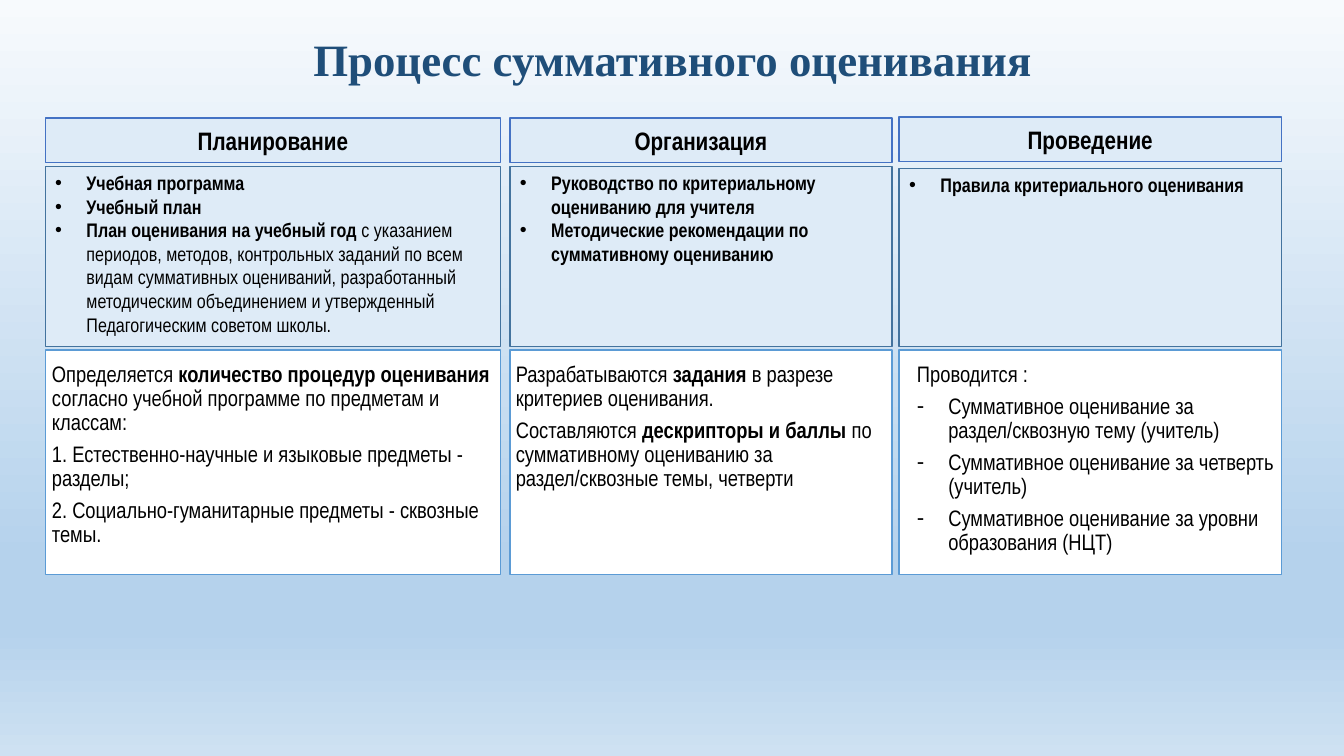
from copy import deepcopy
from dataclasses import dataclass

from lxml.etree import SubElement
from pptx import Presentation
from pptx.dml.color import RGBColor
from pptx.enum.shapes import MSO_SHAPE
from pptx.enum.text import MSO_ANCHOR as Anchor, PP_ALIGN as Align
from pptx.oxml.ns import qn
from pptx.util import Cm, Pt


@dataclass(frozen=True)
class Theme:
    title_font: str = "Times New Roman"
    body_font: str = "Arial Narrow"
    title_size: int = 32
    heading_size: int = 18
    document_size: int = 14
    detail_size: int = 16
    title_color: str = "1F4E79"
    text_color: str = "000000"
    panel_fill: str = "DEEBF7"
    detail_fill: str = "FFFFFF"
    heading_line: str = "4472C4"
    document_line: str = "43739E"
    detail_line: str = "5B9BD5"
    background: tuple = ((0, "F7FAFD"), (0.74, "B5D2EC"), (0.83, "B5D2EC"), (1, "CEE1F2"))


theme = Theme()


def add_panel(left, top, width, height, fill, line):
    panel = slide.shapes.add_shape(MSO_SHAPE.RECTANGLE, Cm(left), Cm(top), Cm(width), Cm(height))
    panel.shadow.inherit = False
    panel.fill.solid()
    panel.fill.fore_color.rgb = RGBColor.from_string(fill)
    panel.line.color.rgb = RGBColor.from_string(line)
    panel.line.width = Pt(1)
    return panel


def write(shape, lines, size, font=theme.body_font, color=theme.text_color,
          align=Align.LEFT, anchor=Anchor.TOP, spacing=1, after=0):
    """Write one paragraph per line; ** toggles bold, a leading "• " or "- " is a bullet."""
    frame = shape.text_frame
    frame.word_wrap = True
    frame.vertical_anchor = anchor
    for index, line in enumerate(lines):
        paragraph = frame.paragraphs[0] if index == 0 else frame.add_paragraph()
        paragraph.alignment = align
        paragraph.line_spacing = spacing
        paragraph.space_after = Pt(after)
        if line[:2] in ("• ", "- "):
            properties = paragraph._p.get_or_add_pPr()
            properties.set("marL", str(Cm(0.79)))
            properties.set("indent", str(-Cm(0.79)))
            SubElement(properties, qn("a:buFont"), typeface="Arial")
            SubElement(properties, qn("a:buChar"), char=line[0])
            line = line[2:]
        for part, text in enumerate(line.split("**")):
            if text:
                run = paragraph.add_run()
                run.text = text
                run.font.name = font
                run.font.size = Pt(size)
                run.font.bold = part % 2 == 1
                run.font.color.rgb = RGBColor.from_string(color)


presentation = Presentation()
presentation.slide_width = Cm(33.87)
presentation.slide_height = Cm(19.05)
slide = presentation.slides.add_slide(presentation.slide_layouts[6])

background = slide.background.fill
background.gradient()
background.gradient_angle = 270
stop_list = next(slide.element.iter(qn("a:gsLst")))
while len(stop_list) < len(theme.background):
    stop_list.append(deepcopy(stop_list[0]))
for stop, (position, color) in zip(background.gradient_stops, theme.background):
    stop.position = position
    stop.color.rgb = RGBColor.from_string(color)

title = slide.shapes.add_textbox(Cm(1.57), Cm(0.69), Cm(30.76), Cm(1.73))
write(title, ["**Процесс суммативного оценивания**"], theme.title_size, theme.title_font,
      theme.title_color, Align.CENTER, Anchor.MIDDLE, spacing=0.9)

stages = [
    dict(
        heading="Планирование", left=1.14, width=11.48, heading_top=2.97, document_top=4.19,
        detail_shift=0.02,
        documents=[
            "• **Учебная программа**",
            "• **Учебный план**",
            "• **План оценивания на учебный год **с указанием периодов, методов, контрольных "
            "заданий по всем видам суммативных оцениваний, разработанный методическим "
            "объединением и утвержденный Педагогическим советом школы.",
        ],
        details=[
            "Определяется** количество процедур оценивания **согласно учебной программе "
            "по предметам и классам:",
            "1. Естественно-научные и языковые предметы - разделы;",
            "2. Социально-гуманитарные предметы - сквозные темы.",
        ],
    ),
    dict(
        heading="Организация", left=12.85, width=9.63, heading_top=2.97, document_top=4.19,
        detail_shift=0,
        documents=[
            "• **Руководство по критериальному оцениванию для учителя**",
            "• **Методические рекомендации по суммативному оцениванию**",
        ],
        details=[
            "Разрабатываются **задания **в разрезе критериев оценивания.",
            "Составляются **дескрипторы и баллы** по суммативному оцениванию за "
            "раздел/сквозные темы, четверти",
        ],
    ),
    dict(
        heading="Проведение", left=22.66, width=9.63, heading_top=2.95, document_top=4.24,
        detail_shift=0.3,
        documents=["• **Правила критериального оценивания**"],
        details=[
            "Проводится :",
            "- Суммативное оценивание за раздел/сквозную тему (учитель)",
            "- Суммативное оценивание за четверть (учитель)",
            "- Суммативное оценивание за уровни образования (НЦТ)",
        ],
    ),
]

document_bottom = 8.74
for stage in stages:
    left, width = stage["left"], stage["width"]

    add_panel(left, 8.82, width, 5.66, theme.detail_fill, theme.detail_line)
    details = slide.shapes.add_textbox(Cm(left + stage["detail_shift"]), Cm(8.99), Cm(width), Cm(5.66))
    frame = details.text_frame
    frame.margin_left = frame.margin_right = frame.margin_top = frame.margin_bottom = Cm(0.15)
    write(details, stage["details"], theme.detail_size, spacing=0.9, after=5.6)

    heading = add_panel(left, stage["heading_top"], width, 1.12, theme.panel_fill, theme.heading_line)
    write(heading, [f"**{stage['heading']}**"], theme.heading_size,
          align=Align.CENTER, anchor=Anchor.MIDDLE)

    top = stage["document_top"]
    documents = add_panel(left, top, width, document_bottom - top, theme.panel_fill, theme.document_line)
    write(documents, stage["documents"], theme.document_size)

presentation.save("out.pptx")
